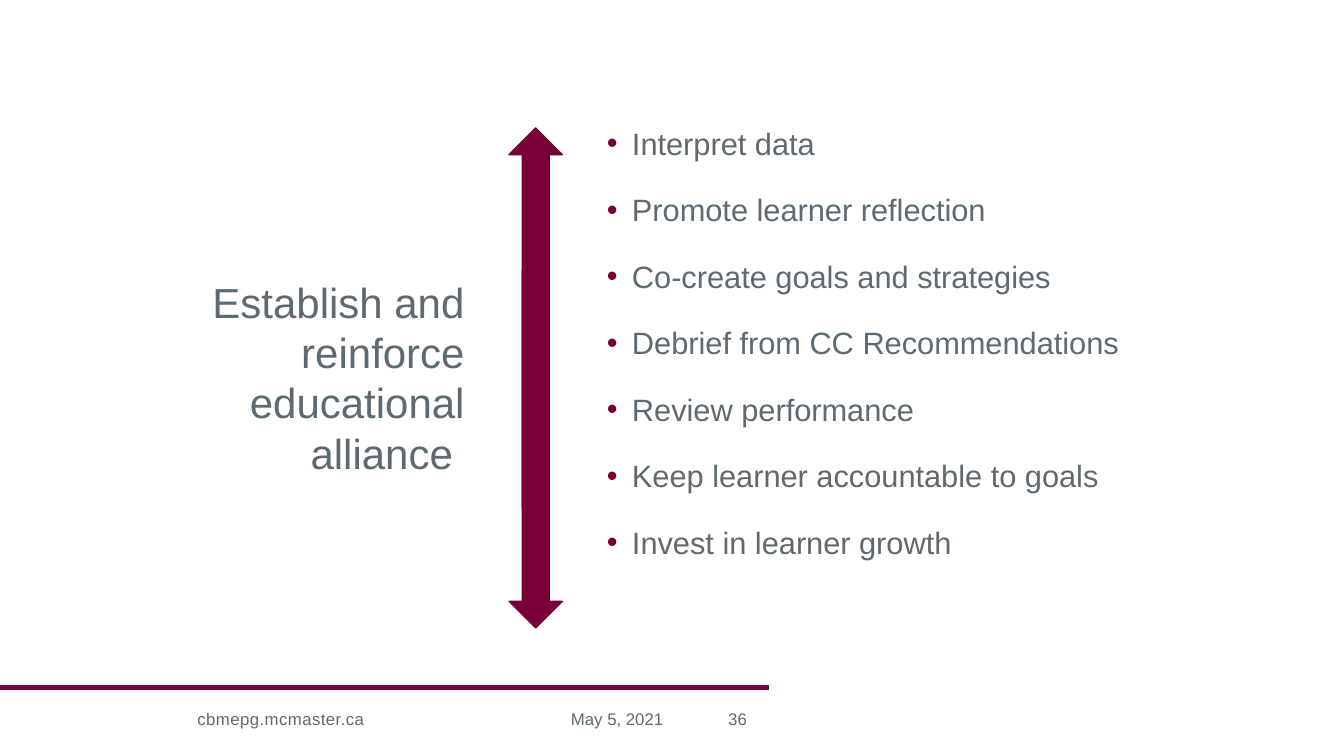
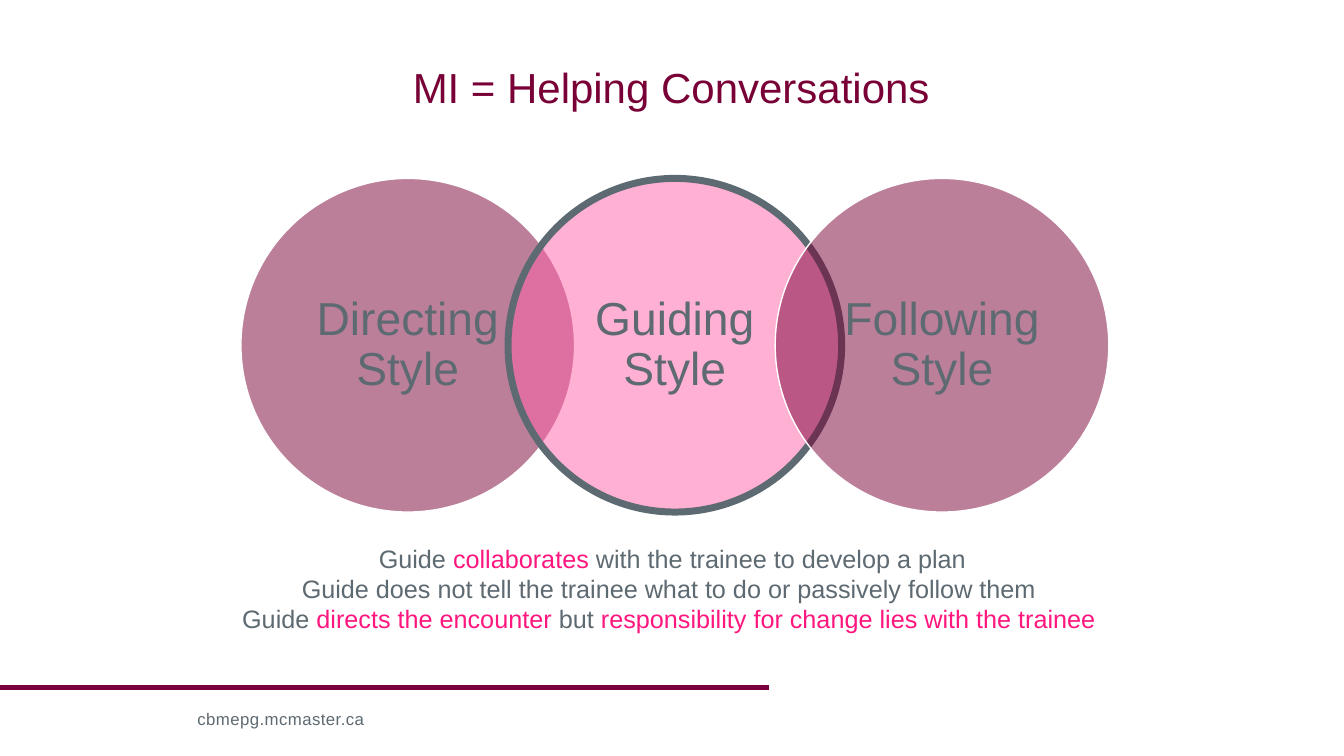
from lxml import etree
from pptx import Presentation
from pptx.dml.color import RGBColor
from pptx.enum.shapes import MSO_CONNECTOR, MSO_SHAPE
from pptx.enum.text import MSO_ANCHOR, PP_ALIGN
from pptx.oxml.ns import qn
from pptx.util import Inches, Pt

LEFT, CENTER, RIGHT = PP_ALIGN.LEFT, PP_ALIGN.CENTER, PP_ALIGN.RIGHT
TOP, MIDDLE = MSO_ANCHOR.TOP, MSO_ANCHOR.MIDDLE
ELLIPSE, UP_ARROW = MSO_SHAPE.OVAL, MSO_SHAPE.UP_ARROW
STRAIGHT = MSO_CONNECTOR.STRAIGHT

COLORS = {
    "maroon": "790036",
    "rule": "7C0040",
    "gray": "5E6A71",
    "pink": "FF63A9",
    "accent": "FF167E",
    "white": "FFFFFF",
}
FONT = "Arial"
COLS, ROWS = 80, 45
WIDE = (0.1, 0.05, 0.1, 0.05)
TIGHT = (0.07, 0.04, 0.07, 0.04)


def rgb(name):
    return RGBColor.from_string(COLORS[name])


class Deck:
    def __init__(self):
        self.prs = Presentation()
        self.prs.slide_width = Inches(13.33)
        self.prs.slide_height = Inches(7.5)
        self.s = None

    def x(self, cols):
        return round(self.prs.slide_width * cols / COLS)

    def y(self, rows):
        return round(self.prs.slide_height * rows / ROWS)

    def box(self, col, row, cols, rows):
        return self.x(col), self.y(row), self.x(cols), self.y(rows)

    def slide(self):
        self.s = self.prs.slides.add_slide(self.prs.slide_layouts[6])
        self.rule(0, 45.78, 40.92)
        self.text((11.16, 41.88, 14.82, 1.8), ["cbmepg.mcmaster.ca"], 12, spacing=30)

    def rule(self, start, end, row):
        line = self.s.shapes.add_connector(
            STRAIGHT, self.x(start), self.y(row), self.x(end), self.y(row))
        line.line.color.rgb = rgb("rule")
        line.line.width = Pt(3)
        etree.SubElement(line._element.spPr, qn("a:effectLst"))

    def fill_text(self, sp, paragraphs, size, color="gray", align=LEFT, anchor=TOP,
                  insets=WIDE, leading=None, bullet=False, spacing=None):
        tf = sp.text_frame
        tf.word_wrap = True
        tf.vertical_anchor = anchor
        (tf.margin_left, tf.margin_top,
         tf.margin_right, tf.margin_bottom) = map(Inches, insets)
        for i, runs in enumerate(paragraphs):
            p = tf.paragraphs[0] if i == 0 else tf.add_paragraph()
            p.alignment = align
            if leading:
                p.line_spacing = leading
            if bullet:
                self.bullet(p, first=i == 0)
            for run in [(runs, color)] if isinstance(runs, str) else runs:
                r = p.add_run()
                r.text, shade = run
                r.font.name = FONT
                r.font.size = Pt(size)
                r.font.color.rgb = rgb(shade)
                if spacing:
                    r.font._element.set("spc", str(spacing))

    def bullet(self, p, first):
        p.space_after = Pt(8)
        if not first:
            p.space_before = Pt(10)
        pPr = p._p.get_or_add_pPr()
        pPr.set("marL", str(Inches(0.25)))
        pPr.set("indent", str(-Inches(0.25)))
        shade = etree.SubElement(pPr, qn("a:buClr"))
        etree.SubElement(shade, qn("a:srgbClr"), val=COLORS["maroon"])
        etree.SubElement(pPr, qn("a:buFont"), typeface=FONT)
        etree.SubElement(pPr, qn("a:buChar"), char="•")

    def text(self, area, paragraphs, size, **style):
        sp = self.s.shapes.add_textbox(*self.box(*area))
        self.fill_text(sp, paragraphs, size, **style)

    def title(self, words):
        self.text((14.1, 1.02, 51.72, 8.7), [words], 30, color="maroon",
                  align=CENTER, anchor=MIDDLE, leading=0.9)

    def shape(self, kind, area, fill, line, width, alpha=None, rotation=0):
        sp = self.s.shapes.add_shape(kind, *self.box(*area))
        sp.shadow.inherit = False
        sp.rotation = rotation
        sp.fill.solid()
        sp.fill.fore_color.rgb = rgb(fill)
        sp.line.color.rgb = rgb(line)
        sp.line.width = Pt(width)
        if alpha:
            shade = sp._element.spPr.find(qn("a:solidFill"))[0]
            etree.SubElement(shade, qn("a:alpha"), val=str(alpha * 1000))
        return sp

    def circle(self, area, words, fill, line, width):
        sp = self.shape(ELLIPSE, area, fill, line, width, alpha=50)
        self.fill_text(sp, [words], 33, align=CENTER, anchor=MIDDLE,
                       insets=(0.18, 0.05, 0.18, 0.05), leading=0.9)


def alliance_slide(deck):
    deck.slide()
    deck.text((35.7, 6.9, 33.24, 31.02), [
        "Interpret data",
        "Promote learner reflection",
        "Co-create goals and strategies",
        "Debrief from CC Recommendations",
        "Review performance",
        "Keep learner accountable to goals",
        "Invest in learner growth",
    ], 22, insets=TIGHT, leading=1.12, bullet=True)
    deck.text((11.04, 16.2, 17.04, 12.6),
              ["Establish and reinforce educational alliance "],
              30, align=RIGHT, insets=TIGHT)
    for row, rows, rotation in ((7.62, 22.62, 0), (16.08, 21.3, 180)):
        deck.shape(UP_ARROW, (30.3, row, 3.18, rows), "maroon", "maroon", 1,
                   rotation=rotation)
    deck.text((25.98, 41.58, 14.1, 2.4), ["May 5, 2021"], 12,
              align=RIGHT, anchor=MIDDLE)
    deck.text((40.26, 41.58, 4.2, 2.4), ["36"], 12, align=RIGHT, anchor=MIDDLE,
              insets=(0.1, 0.05, 0, 0.05))


def styles_slide(deck):
    deck.slide()
    left, pitch, size = 14.34, 15.9, 19.86
    circles = (
        ("Directing Style", "maroon", "white", 1),
        ("Guiding Style", "pink", "gray", 5),
        ("Following Style", "maroon", "white", 1),
    )
    for i, circle in enumerate(circles):
        deck.circle((left + i * pitch, 10.62, size, size), *circle)
    deck.text((11.58, 32.04, 56.88, 6.06), [
        [("Guide ", "gray"), ("collaborates", "accent"),
         (" with the trainee to develop a plan", "gray")],
        "Guide does not tell the trainee what to do or passively follow them ",
        [("Guide ", "gray"), ("directs the encounter", "accent"), (" but ", "gray"),
         ("responsibility for change lies with the trainee ", "accent")],
    ], 18, align=CENTER)
    deck.title("MI = Helping Conversations")


def main():
    deck = Deck()
    alliance_slide(deck)
    styles_slide(deck)
    deck.prs.save("out.pptx")


if __name__ == "__main__":
    main()
